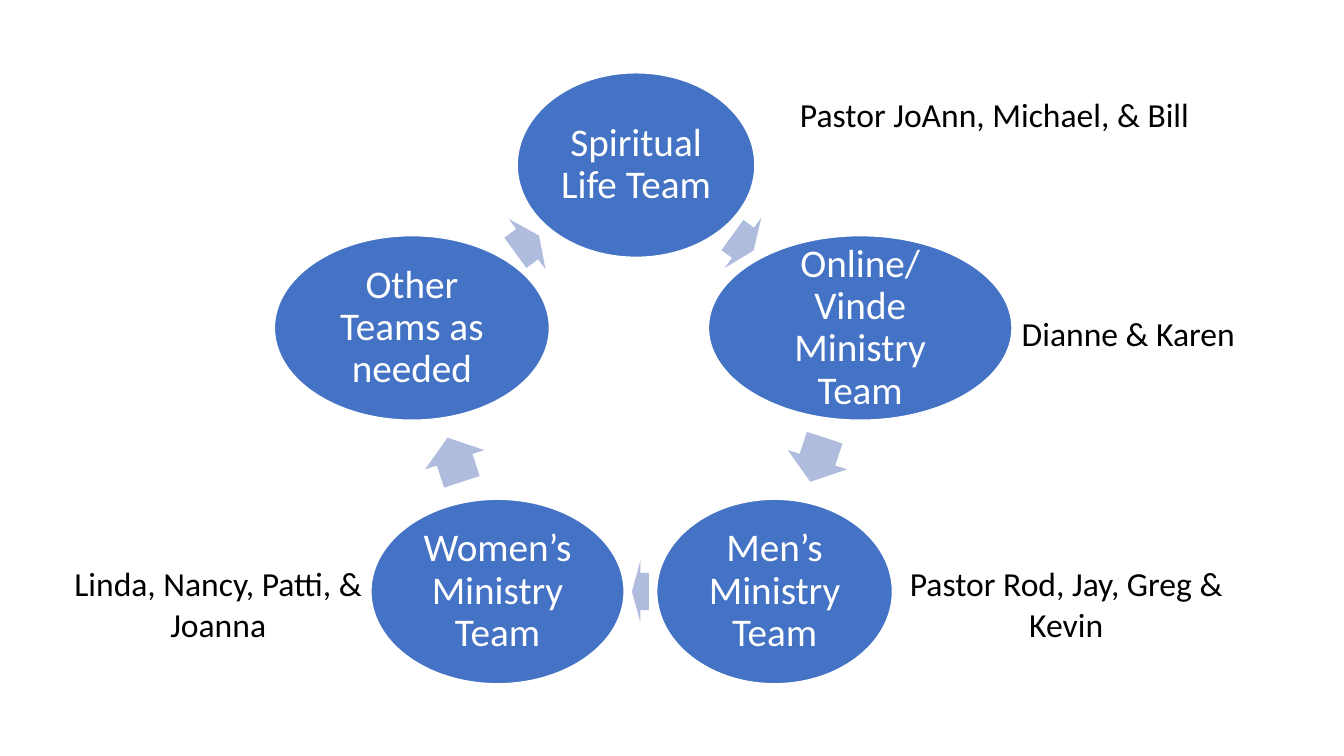
from dataclasses import dataclass
from math import cos, pi, sin

from pptx import Presentation
from pptx.dml.color import RGBColor
from pptx.enum.shapes import MSO_SHAPE
from pptx.enum.text import MSO_ANCHOR, MSO_AUTO_SIZE, PP_ALIGN
from pptx.shapes.autoshape import Shape
from pptx.slide import Slide
from pptx.util import Cm, Pt


@dataclass(frozen=True)
class Theme:
    font: str = "Calibri"
    white: RGBColor = RGBColor(0xFF, 0xFF, 0xFF)
    black: RGBColor = RGBColor(0, 0, 0)
    team: RGBColor = RGBColor(0x44, 0x72, 0xC4)
    arrow: RGBColor = RGBColor(0xB0, 0xBC, 0xDE)
    team_size: int = 28
    members_size: int = 24


@dataclass(frozen=True)
class Team:
    name: str
    width: float
    arrow_length: float
    arrow_shift: float


@dataclass(frozen=True)
class Members:
    names: str
    left: float
    top: float
    width: float
    height: float
    align: PP_ALIGN = PP_ALIGN.LEFT


THEME = Theme()
CENTER_X, CENTER_Y, RADIUS = 16.03, 10.1, 5.94
TEAM_HEIGHT, ARROW_HEIGHT = 4.65, 1.57

TEAMS = [
    Team("Spiritual Life Team", 5.99, 0.66, -0.16),
    Team("Online/Vinde Ministry Team", 7.65, 1.17, 0),
    Team("Men’s Ministry Team", 5.94, 0.43, -0.11),
    Team("Women’s Ministry Team", 6.38, 1.17, 0),
    Team("Other Teams as needed", 6.93, 0.74, 0.1),
]

MEMBERS = [
    Members("Pastor JoAnn, Michael, & Bill", 19.91, 2.24, 11.2, 1.28),
    Members("Dianne & Karen", 25.5, 7.75, 6.81, 1.28),
    Members("Pastor Rod, Jay, Greg & Kevin", 22.63, 14.07, 8.48, 2.31, PP_ALIGN.CENTER),
    Members("Linda, Nancy, Patti, & Joanna", 1.55, 14.07, 7.9, 2.31, PP_ALIGN.CENTER),
]


def write(shape: Shape, text: str, *, size: int, color: RGBColor,
          align: PP_ALIGN, spacing: float = 1.0) -> None:
    shape.text_frame.word_wrap = True
    paragraph = shape.text_frame.paragraphs[0]
    paragraph.alignment = align
    paragraph.line_spacing = spacing
    run = paragraph.add_run()
    run.text = text
    run.font.name = THEME.font
    run.font.size = Pt(size)
    run.font.color.rgb = color


def add_centered(slide: Slide, kind: MSO_SHAPE, x: float, y: float,
                 width: float, height: float, color: RGBColor) -> Shape:
    shape = slide.shapes.add_shape(
        kind, Cm(x - width / 2), Cm(y - height / 2), Cm(width), Cm(height))
    shape.shadow.inherit = False
    shape.fill.solid()
    shape.fill.fore_color.rgb = color
    return shape


def add_team(slide: Slide, team: Team, angle: float) -> None:
    oval = add_centered(slide, MSO_SHAPE.OVAL, CENTER_X + RADIUS * sin(angle),
                        CENTER_Y - RADIUS * cos(angle), team.width, TEAM_HEIGHT, THEME.team)
    oval.line.color.rgb = THEME.white
    oval.line.width = Pt(1)
    frame = oval.text_frame
    frame.vertical_anchor = MSO_ANCHOR.MIDDLE
    frame.margin_left = frame.margin_right = Cm(0.1)
    frame.margin_top = frame.margin_bottom = Cm(0.1)
    write(oval, team.name, size=THEME.team_size, color=THEME.white,
          align=PP_ALIGN.CENTER, spacing=0.9)


def add_arrow(slide: Slide, team: Team, angle: float) -> None:
    reach = RADIUS * cos(pi / len(TEAMS))
    x = CENTER_X + reach * sin(angle) + team.arrow_shift * cos(angle)
    y = CENTER_Y - reach * cos(angle) + team.arrow_shift * sin(angle)
    arrow = add_centered(slide, MSO_SHAPE.RIGHT_ARROW, x, y,
                         team.arrow_length, ARROW_HEIGHT, THEME.arrow)
    arrow.line.fill.background()
    arrow.adjustments[0] = 0.6
    arrow.adjustments[1] = 0.5
    arrow.rotation = round(angle * 180 / pi)


def add_members(slide: Slide, members: Members) -> None:
    label = slide.shapes.add_textbox(
        Cm(members.left), Cm(members.top), Cm(members.width), Cm(members.height))
    label.text_frame.auto_size = MSO_AUTO_SIZE.SHAPE_TO_FIT_TEXT
    write(label, members.names, size=THEME.members_size, color=THEME.black,
          align=members.align)


def main() -> None:
    presentation = Presentation()
    presentation.slide_width = Cm(33.87)
    presentation.slide_height = Cm(19.05)
    slide = presentation.slides.add_slide(presentation.slide_layouts[6])
    step = 2 * pi / len(TEAMS)
    for index, team in enumerate(TEAMS):
        add_team(slide, team, index * step)
        add_arrow(slide, team, (index + 0.5) * step)
    for members in MEMBERS:
        add_members(slide, members)
    presentation.save("out.pptx")


if __name__ == "__main__":
    main()
